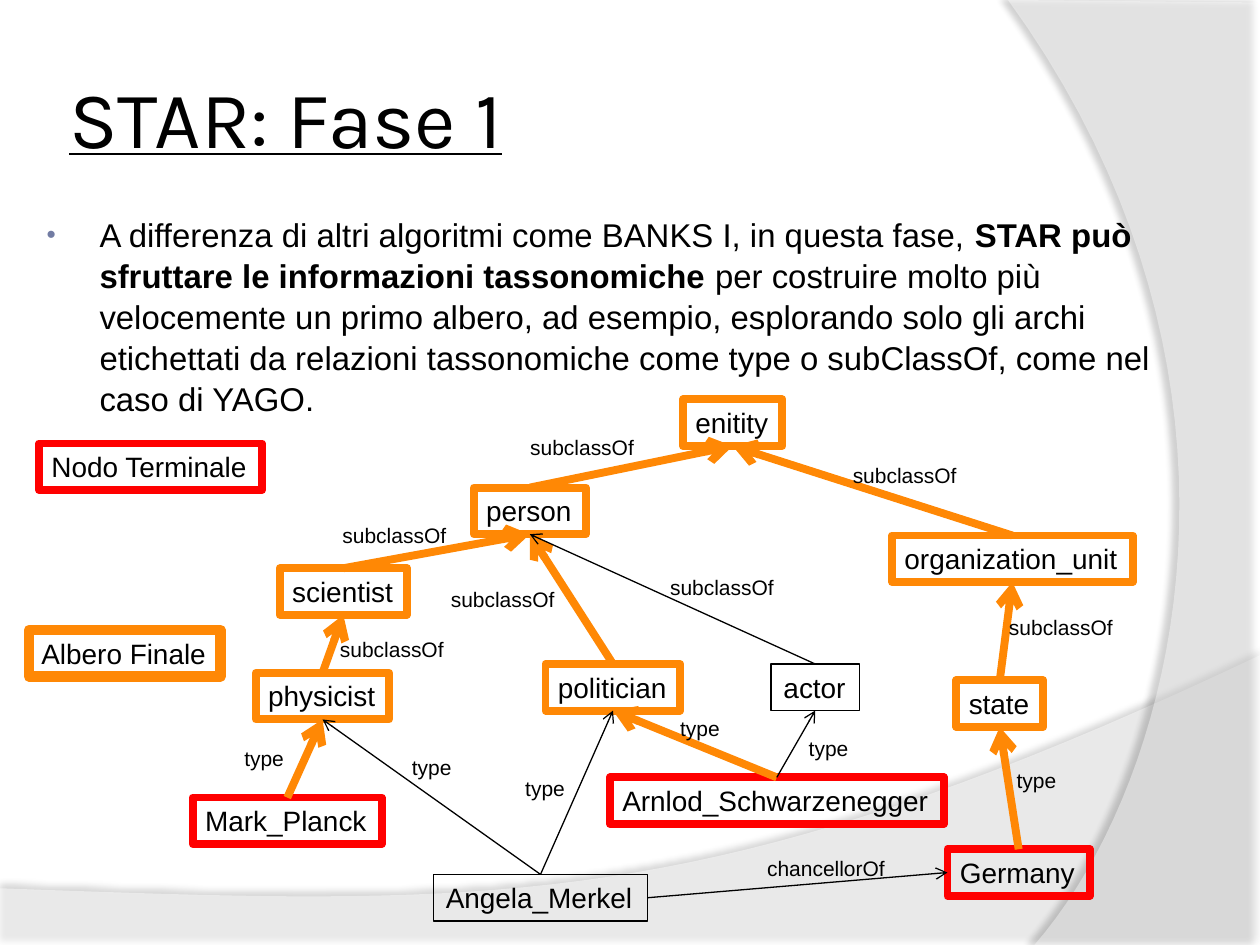
from pptx import Presentation
from pptx.dml.color import RGBColor
from pptx.enum.shapes import MSO_CONNECTOR as Link, MSO_SHAPE as Preset
from pptx.enum.text import MSO_ANCHOR as Anchor, MSO_AUTO_SIZE as Fit, PP_ALIGN as Align
from pptx.oxml.ns import qn
from pptx.util import Inches, Pt
from lxml.etree import SubElement

COLORS = {"ink": "000000", "tree": "FF8805", "leaf": "FF0000",
          "wave": "FFFFFF", "bullet": "727CA3"}
TOP, LEFT, BOTTOM, RIGHT = range(4)
THICK, THIN = 4.5, 0.75

# name: left, top, width, colour, line width
NODES = {
    "enitity": (5.42, 3.17, 0.79, "tree", THICK),
    "organization_unit": (7.08, 4.25, 1.91, "tree", THICK),
    "state": (7.59, 5.4, 0.69, "tree", THICK),
    "Germany": (7.52, 6.74, 1.13, "leaf", THICK),
    "person": (3.76, 3.87, 0.89, "tree", THICK),
    "actor": (6.12, 5.27, 0.7, "ink", THIN),
    "politician": (4.33, 5.27, 1.07, "tree", THICK),
    "scientist": (2.22, 4.51, 1.01, "tree", THICK),
    "physicist": (2.03, 5.34, 1.06, "tree", THICK),
    "Mark_Planck": (1.53, 6.33, 1.5, "leaf", THICK),
    "Angela_Merkel": (3.44, 6.94, 1.7, "ink", THIN),
    "Arnlod_Schwarzenegger": (4.84, 6.17, 2.65, "leaf", THICK),
    "Nodo Terminale": (0.31, 3.52, 1.77, "leaf", THICK),
    "Albero Finale": (0.23, 5, 1.52, "tree", 6),
}
TREE = [
    ("organization_unit", "enitity"), ("state", "organization_unit"),
    ("Germany", "state"), ("person", "enitity"), ("scientist", "person"),
    ("politician", "person"), ("physicist", "scientist"),
    ("Arnlod_Schwarzenegger", "politician"), ("Mark_Planck", "physicist"),
]
OTHER = [
    ("actor", "person"), ("Arnlod_Schwarzenegger", "actor"),
    ("Angela_Merkel", "politician"), ("Angela_Merkel", "physicist"),
]
# text: width, then left, top, height of each label
LABELS = {
    "subclassOf": (1.03, [(6.67, 3.62, 0.5), (7.91, 4.83, 0.3), (2.62, 4.1, 0.5),
                          (2.6, 5, 0.5), (4.11, 3.4, 0.5), (5.22, 4.51, 0.5),
                          (3.48, 4.61, 0.5)]),
    "type": (0.52, [(7.97, 6.04, 0.3), (5.3, 5.63, 0.3), (4.07, 6.11, 0.3),
                    (3.17, 5.94, 0.5), (1.84, 5.87, 0.3), (6.32, 5.79, 0.5)]),
    "chancellorOf": (1.14, [(5.99, 6.74, 0.3)]),
}
BODY = [
    ("A differenza di altri algoritmi come BANKS I, in questa fase, ", False),
    ("STAR può sfruttare le informazioni tassonomiche ", True),
    ("per costruire molto più velocemente un primo albero, ad esempio, "
     "esplorando solo gli archi etichettati da relazioni tassonomiche come "
     "type o subClassOf, come nel caso di YAGO.", False),
]


def color(key):
    return RGBColor.from_string(COLORS[key])


def curve(a, b, c, d, steps=40):
    """Points of the cubic Bezier from a to d, pulled by b and c."""
    for i in range(steps + 1):
        t = i / steps
        u = 1 - t
        yield tuple(u**3 * p + 3 * u * u * t * q + 3 * u * t * t * r + t**3 * s
                    for p, q, r, s in zip(a, b, c, d))


def place(shape, *box):
    shape.left, shape.top, shape.width, shape.height = map(Inches, box)


class Board:
    font = "Arial"

    def __init__(self, slide):
        self.slide = slide
        self.shapes = slide.shapes

    def run(self, par, text, size, font=None, bold=None, under=None):
        run = par.add_run()
        run.text = text
        face = run.font
        face.name, face.size = font or self.font, Pt(size)
        face.bold, face.underline = bold, under
        face.color.rgb = color("ink")

    def wave(self, points, alpha, shade, dist, angle):
        """Translucent sheet with a soft shadow, behind everything else."""
        dots = [(Inches(x), Inches(y)) for x, y in points]
        form = self.shapes.build_freeform(*dots[0])
        form.add_line_segments(dots[1:], close=True)
        shape = form.convert_to_shape()
        shape.line.fill.background()
        shape.fill.solid()
        shape.fill.fore_color.rgb = color("wave")
        shape.shadow.inherit = False
        props = shape._element.spPr
        fill = props.find(qn("a:solidFill")).find(qn("a:srgbClr"))
        SubElement(fill, qn("a:alpha"), val=str(alpha * 1000))
        cast = SubElement(props.find(qn("a:effectLst")), qn("a:outerShdw"),
                          blurRad=str(Pt(4)), dist=str(Pt(dist)),
                          dir=str(angle * 60000), algn="ctr", rotWithShape="0")
        tint = SubElement(cast, qn("a:srgbClr"), val=COLORS["ink"])
        SubElement(tint, qn("a:alpha"), val=str(shade * 1000))
        return shape._element

    def title(self, text):
        shape = self.shapes.title
        place(shape, 0.5, 0.3, 8.17, 1.25)
        frame = shape.text_frame
        frame.auto_size, frame.vertical_anchor = Fit.NONE, Anchor.MIDDLE
        frame.margin_left = frame.margin_right = Inches(0.05)
        par = frame.paragraphs[0]
        par.alignment = Align.LEFT
        self.run(par, text, 46, font="Karla", under=True)

    def body(self, parts):
        shape = self.slide.placeholders[1]
        place(shape, 0.23, 1.64, 9.19, 1.48)
        shape.text_frame.auto_size = Fit.NONE
        par = shape.text_frame.paragraphs[0]
        par.space_before, par.line_spacing = Pt(3.75), 1.04
        props = par._p.get_or_add_pPr()
        props.set("marL", str(Inches(0.46)))
        props.set("indent", str(Inches(-0.42)))
        tint = SubElement(props, qn("a:buClr"))
        SubElement(tint, qn("a:srgbClr"), val=COLORS["bullet"])
        SubElement(props, qn("a:buSzPct"), val="80000")
        SubElement(props, qn("a:buFont"), typeface=self.font)
        SubElement(props, qn("a:buChar"), char="•")
        for text, bold in parts:
            self.run(par, text, 18.8, bold=bold)

    def line(self, shape, text, size):
        """One left-aligned line of text that does not wrap."""
        frame = shape.text_frame
        frame.word_wrap, frame.auto_size = False, Fit.SHAPE_TO_FIT_TEXT
        frame.vertical_anchor = Anchor.TOP
        par = frame.paragraphs[0]
        par.alignment = Align.LEFT
        self.run(par, text, size)

    def node(self, text, left, top, width, tint, weight):
        box = map(Inches, (left, top, width, 0.37))
        shape = self.shapes.add_shape(Preset.RECTANGLE, *box)
        shape.shadow.inherit = False
        shape.fill.background()
        shape.line.color.rgb, shape.line.width = color(tint), Pt(weight)
        self.line(shape, text, 16)
        return shape

    def label(self, text, *box):
        shape = self.shapes.add_textbox(*map(Inches, box))
        self.line(shape, text, 12)

    def edge(self, start, end, tint, weight, out=TOP, into=BOTTOM):
        link = self.shapes.add_connector(Link.STRAIGHT, 0, 0, 0, 0)
        link.begin_connect(start, out)
        link.end_connect(end, into)
        link.line.color.rgb, link.line.width = color(tint), Pt(weight)
        props = link._element.spPr
        SubElement(props.find(qn("a:ln")), qn("a:tailEnd"), type="arrow")
        SubElement(props, qn("a:effectLst"))


def main():
    deck = Presentation()
    deck.slide_width, deck.slide_height = Inches(10), Inches(7.5)
    board = Board(deck.slides.add_slide(deck.slide_layouts[1]))

    low = [(0, 7.51), (10, 7.51),
           *curve((10, 5.2), (5.59, 7.29), (3.91, 7.19), (0, 7.05))]
    side = [(10, 0.02), (10, 7.5),
            *curve((8.21, 7.5), (9.35, 6.19), (10.18, 3), (8, 0))]
    waves = [board.wave(low, 45, 35, 3.5, 270), board.wave(side, 40, 45, 4, 180)]
    for spot, wave in enumerate(waves, 2):
        board.shapes._spTree.insert(spot, wave)

    board.title("STAR: Fase 1")
    board.body(BODY)
    nodes = {name: board.node(name, *look) for name, look in NODES.items()}
    for pairs, tint, weight in ((TREE, "tree", THICK), (OTHER, "ink", THIN)):
        for start, end in pairs:
            board.edge(nodes[start], nodes[end], tint, weight)
    board.edge(nodes["Angela_Merkel"], nodes["Germany"], "ink", THIN, RIGHT, LEFT)
    for text, (width, spots) in LABELS.items():
        for left, top, height in spots:
            board.label(text, left, top, width, height)
    deck.save("out.pptx")


if __name__ == "__main__":
    main()
